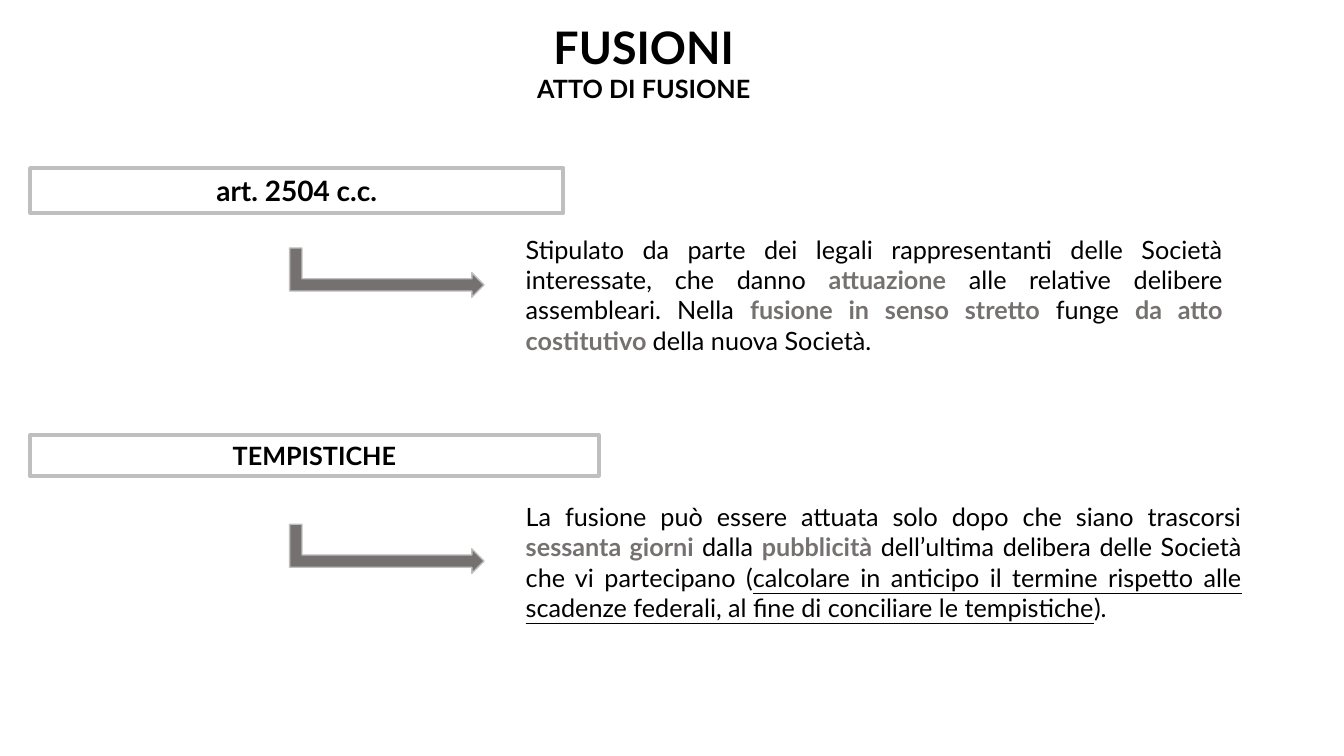
from pptx import Presentation
from pptx.dml.color import RGBColor
from pptx.enum.shapes import MSO_SHAPE
from pptx.enum.text import MSO_ANCHOR, PP_ALIGN
from pptx.util import Cm, Pt

RECT, BENT_ARROW = MSO_SHAPE.RECTANGLE, MSO_SHAPE.BENT_UP_ARROW
TOP, MIDDLE = MSO_ANCHOR.TOP, MSO_ANCHOR.MIDDLE
CENTER, JUSTIFY = PP_ALIGN.CENTER, PP_ALIGN.JUSTIFY
FONT, BLACK, GREY, SILVER = "Lato", "000000", "767171", "BFBFBF"
PLAIN, STRONG, UNDERLINED = "plain", "strong", "underlined"

SECTIONS = [
    dict(box=(0.76, 4.24, 13.44, 1.12), label="art. 2504 c.c.", size=20,
         arrow_drop=2.01, body_size=(18.06, 4.65), runs=[
             ("Stipulato da parte dei legali rappresentanti delle Società "
              "interessate, che danno ", PLAIN),
             ("attuazione", STRONG),
             (" alle relative delibere assembleari. Nella ", PLAIN),
             ("fusione in senso stretto ", STRONG),
             ("funge ", PLAIN),
             ("da atto costitutivo ", STRONG),
             ("della nuova Società.", PLAIN)]),
    dict(box=(0.76, 10.97, 14.33, 1.02), label="TEMPISTICHE", size=18,
         arrow_drop=2.24, body_size=(18.54, 5.31), runs=[
             ("La fusione può essere attuata solo dopo che siano trascorsi ", PLAIN),
             ("sessanta giorni ", STRONG),
             ("dalla ", PLAIN),
             ("pubblicità", STRONG),
             (" dell’ultima delibera delle Società che vi partecipano (", PLAIN),
             ("calcolare in anticipo il termine rispetto alle scadenze federali, "
              "al fine di conciliare le tempistiche", UNDERLINED),
             (").", PLAIN)]),
]


def rgb(value):
    """Return the colour for a hex string."""
    return RGBColor.from_string(value)


def add_run(p, text, size, color=BLACK, bold=False, underline=False):
    """Append one formatted run to a paragraph."""
    r = p.add_run()
    r.text = text
    r.font.name, r.font.size = FONT, Pt(size)
    r.font.bold, r.font.underline = bold, underline
    r.font.color.rgb = rgb(color)


def add_outlined(s, kind, box, width):
    """Add a preset shape with a silver outline and no shadow."""
    sp = s.shapes.add_shape(kind, *map(Cm, box))
    sp.shadow.inherit = False
    sp.line.color.rgb, sp.line.width = rgb(SILVER), Pt(width)
    return sp


def add_title(s, box):
    """Place the heading and its subheading in the title placeholder."""
    sp = s.shapes.title
    sp.left, sp.top, sp.width, sp.height = map(Cm, box)
    tf = sp.text_frame
    tf.vertical_anchor, tf.word_wrap = TOP, True
    lines = [("FUSIONI", 32), ("ATTO DI FUSIONE", 18)]
    for i, (text, size) in enumerate(lines):
        p = tf.add_paragraph() if i else tf.paragraphs[0]
        p.alignment, p.space_before = CENTER, Pt(0)
        add_run(p, text, size, bold=True)


def add_label(s, box, text, size):
    """Add a framed section label."""
    sp = add_outlined(s, RECT, box, 3)
    sp.fill.background()
    tf = sp.text_frame
    tf.word_wrap, tf.vertical_anchor = True, MIDDLE
    p = tf.paragraphs[0]
    p.alignment = CENTER
    add_run(p, text, size, bold=True)


def add_arrow(s, box):
    """Add an arrow going down then right that fills the given box."""
    left, top, width, height = box
    shift = (width - height) / 2
    sp = add_outlined(s, BENT_ARROW, (left + shift, top - shift, height, width), 1)
    sp.rotation = 90
    sp.fill.solid()
    sp.fill.fore_color.rgb = rgb(GREY)


def add_body(s, box, runs):
    """Add a justified paragraph with emphasised passages."""
    tf = s.shapes.add_textbox(*map(Cm, box)).text_frame
    tf.word_wrap = True
    p = tf.paragraphs[0]
    p.alignment = JUSTIFY
    for text, style in runs:
        strong = style == STRONG
        add_run(p, text, 18, GREY if strong else BLACK, strong, style == UNDERLINED)


def add_section(s, box, label, size, arrow_drop, body_size, runs):
    """Add a label with an arrow and an explanation below it."""
    left, top = box[:2]
    add_label(s, box, label, size)
    add_arrow(s, (left + 6.54, top + arrow_drop, 4.9, 1.24))
    add_body(s, (left + 12.24, top + 1.54, *body_size), runs)


def main():
    """Build and save the slide."""
    prs = Presentation()
    prs.slide_width, prs.slide_height = Cm(33.87), Cm(19.05)
    s = prs.slides.add_slide(prs.slide_layouts[5])
    add_title(s, (2.51, 0.36, 27.43, 2.39))
    for section in SECTIONS:
        add_section(s, **section)
    prs.save("out.pptx")


if __name__ == "__main__":
    main()
